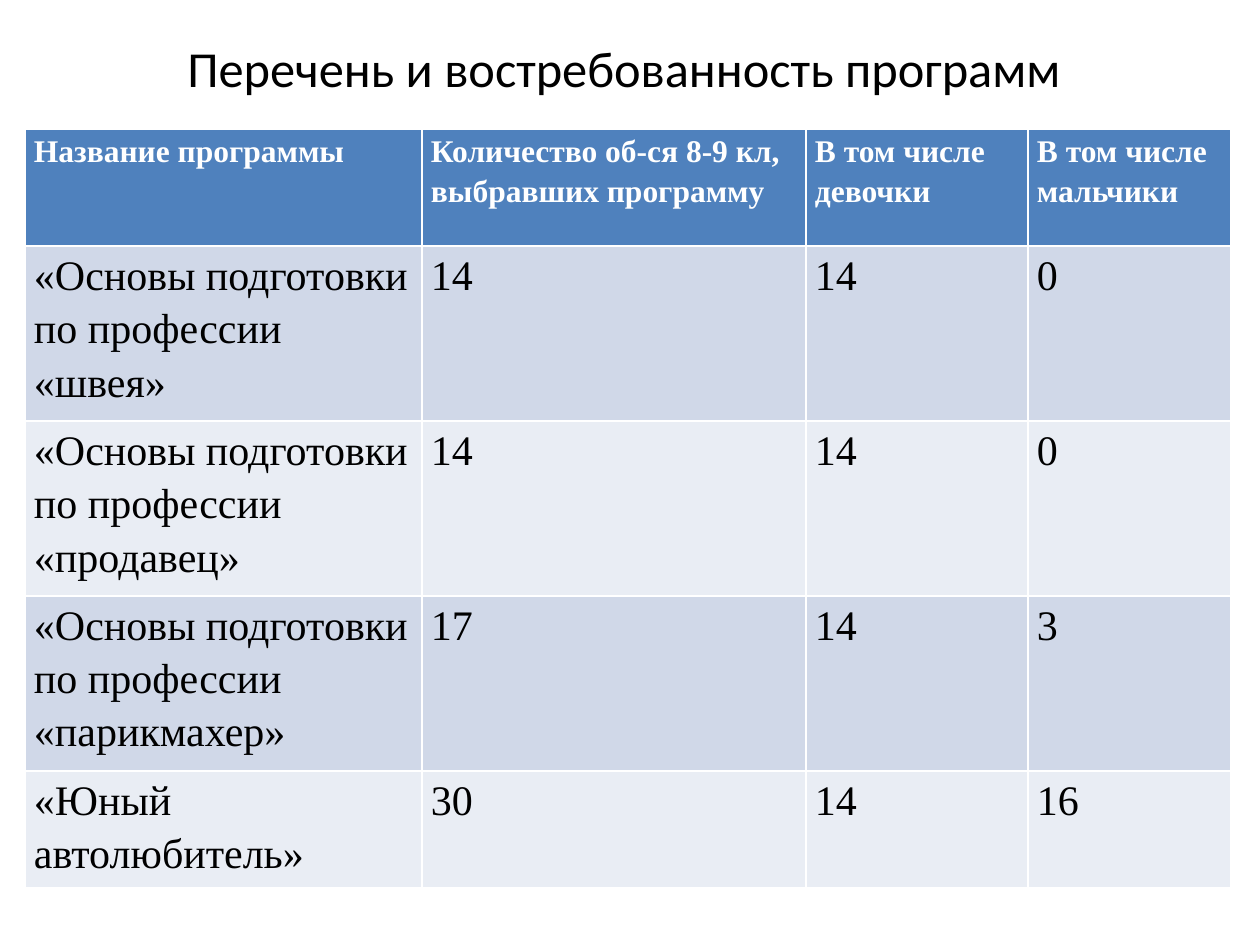
from pptx import Presentation
from pptx import util as u
from pptx.dml.color import RGBColor
from pptx.enum import text

EMU_PER_PX = u.Inches(1) / 126
COLUMN_WIDTHS = [397, 384, 222, 203]
ROW_HEIGHTS = [117, 175, 175, 175, 117]
ROWS = [
    ["Название программы", "Количество об-ся 8-9 кл, выбравших программу",
     "В том числе девочки", "В том числе мальчики"],
    ["«Основы подготовки по профессии «швея»", "14", "14", "0"],
    ["«Основы подготовки по профессии «продавец»", "14", "14", "0"],
    ["«Основы подготовки по профессии «парикмахер»", "17", "14", "3"],
    ["«Юный автолюбитель»", "30", "14", "16"],
]


def px(length):
    return u.Emu(round(length * EMU_PER_PX))


def color(value):
    return RGBColor.from_string(value)


class SlideBuilder:
    """Holds the style and the slide being filled."""
    title_font = "Calibri"
    table_font = "Times New Roman"
    dark, light = "000000", "FFFFFF"
    header_fill = "4F81BD"
    band_fills = ["D0D8E8", "E9EDF4"]

    def __init__(self, slide):
        self.slide = slide

    def format_runs(self, paragraph, font, size, ink, bold=False):
        for run in paragraph.runs:
            run.font.name = font
            run.font.size = u.Pt(size)
            run.font.bold = bold
            run.font.color.rgb = color(ink)

    def title(self, wording, left, top, width, height):
        shape = self.slide.shapes.title
        shape.left, shape.top = px(left), px(top)
        shape.width, shape.height = px(width), px(height)
        frame = shape.text_frame
        frame.text = wording
        frame.word_wrap = True
        frame.auto_size = text.MSO_AUTO_SIZE.NONE
        frame.vertical_anchor = text.MSO_ANCHOR.MIDDLE
        paragraph = frame.paragraphs[0]
        paragraph.alignment = text.PP_ALIGN.CENTER
        self.format_runs(paragraph, self.title_font, 28.8, self.dark)

    def cell(self, cell, wording, fill, size, ink, bold):
        cell.fill.solid()
        cell.fill.fore_color.rgb = color(fill)
        cell.margin_left = cell.margin_right = px(9)
        cell.margin_top = cell.margin_bottom = 0
        cell.text_frame.text = wording
        paragraph = cell.text_frame.paragraphs[0]
        paragraph.line_spacing = 1.15
        self.format_runs(paragraph, self.table_font, size, ink, bold)

    def table(self, rows, left, top, widths, heights):
        table = self.slide.shapes.add_table(
            len(rows), len(widths), px(left), px(top),
            px(sum(widths)), px(sum(heights))).table
        for column, width in zip(table.columns, widths):
            column.width = px(width)
        for index, (row, height) in enumerate(zip(table.rows, heights)):
            row.height = px(height)
            if index == 0:
                style = (self.header_fill, 18, self.light, True)
            else:
                style = (self.band_fills[(index - 1) % 2], 24, self.dark, False)
            for cell, wording in zip(row.cells, rows[index]):
                self.cell(cell, wording, *style)


def main():
    presentation = Presentation()
    presentation.slide_width, presentation.slide_height = px(1260), px(945)
    slide = presentation.slides.add_slide(presentation.slide_layouts[5])
    builder = SlideBuilder(slide)
    builder.title("Перечень и востребованность программ ", 63, 38, 1134, 58)
    builder.table(ROWS, 25, 129, COLUMN_WIDTHS, ROW_HEIGHTS)
    presentation.save("out.pptx")


if __name__ == "__main__":
    main()
